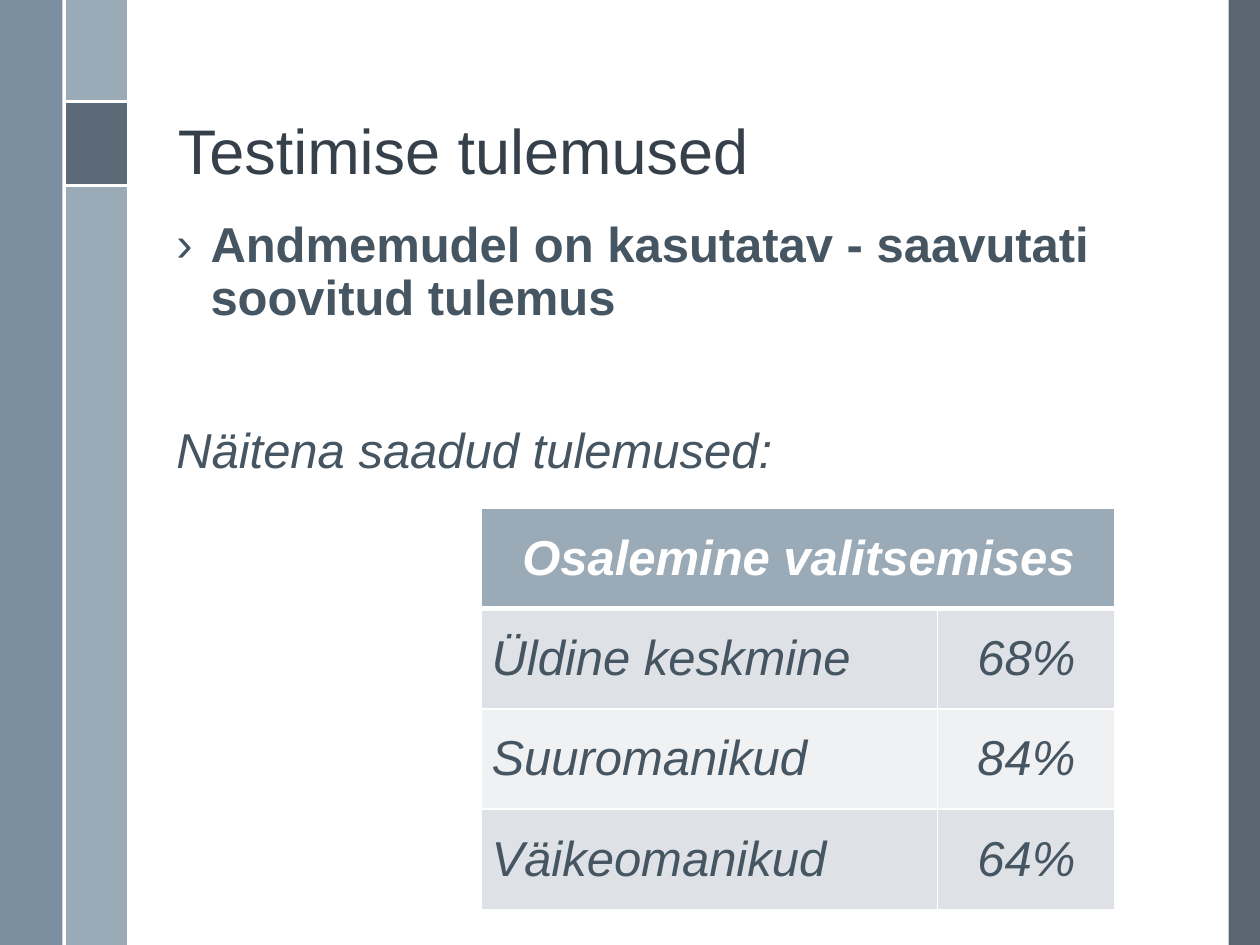
from lxml.etree import SubElement
from pptx import Presentation
from pptx.dml.color import RGBColor
from pptx.enum.shapes import MSO_CONNECTOR, MSO_SHAPE
from pptx.enum.text import MSO_ANCHOR, MSO_AUTO_SIZE, PP_ALIGN
from pptx.oxml.ns import qn
from pptx.util import Cm, Pt

# Content
TITLE = "Testimise tulemused"
POINT = "Andmemudel on kasutatav - saavutati soovitud tulemus"
INTRO = "Näitena saadud tulemused:"
HEAD = "Osalemine valitsemises"
ROWS = [("Üldine keskmine", "68%"), ("Suuromanikud", "84%"), ("Väikeomanikud", "64%")]

COLORS = {"white": "FFFFFF", "slate": "475562", "steel": "6A8093", "mist": "9BAAB7",
          "title": "35404A", "text": "465562", "odd": "DEE2E6", "even": "EFF1F3"}

# Lengths in cm
WIDE, HIGH = 25.4, 19.05
LEFT, RIGHT = 1.3, 2.56      # edges of the inner strip
TOP, LOW = 2.05, 3.74        # edges of the dark box
BARS = [  # left, top, width, height, colour, opacity in %
    (24.77, 0, 0.63, HIGH, "slate", 90),
    (LEFT, 0, RIGHT - LEFT, HIGH, "mist", 100),
    (0, 0, 1.26, HIGH, "steel", 88),
    (LEFT, TOP, RIGHT - LEFT, LOW - TOP, "slate", 75),
]
RULES = [(LEFT, TOP, RIGHT, TOP), (LEFT, LOW, RIGHT, LOW), (LEFT, 0, LEFT, HIGH)]
COLS, ROW = (9.19, 3.58), 2.02


def rgb(name):
    return RGBColor.from_string(COLORS[name])


def style(para, size, color, bold=False, italic=False):
    for run in para.runs:
        font = run.font
        font.name, font.size, font.color.rgb = "Arial", Pt(size), rgb(color)
        font.bold, font.italic = bold, italic


def place(shape, *box):
    shape.left, shape.top, shape.width, shape.height = map(Cm, box)


def border(cell, base):
    props = cell._tc.get_or_add_tcPr()
    for spot, (side, width) in enumerate((("L", 1), ("R", 1), ("T", 1), ("B", base))):
        line = SubElement(props, qn(f"a:ln{side}"), w=str(Pt(width)))
        fill = SubElement(line, qn("a:solidFill"))
        SubElement(fill, qn("a:srgbClr"), val=COLORS["white"])
        props.insert(spot, line)  # borders come before the fill


deck = Presentation()
deck.slide_width, deck.slide_height = Cm(WIDE), Cm(HIGH)
slide = deck.slides.add_slide(deck.slide_layouts[1])
shapes = slide.shapes

# Side strips
for *box, color, alpha in BARS:
    bar = shapes.add_shape(MSO_SHAPE.RECTANGLE, *map(Cm, box))
    bar.shadow.inherit = False
    bar.fill.solid()
    bar.fill.fore_color.rgb = rgb(color)
    bar.line.fill.background()
    if alpha < 100:
        tint = bar._element.spPr.find(".//" + qn("a:srgbClr"))
        SubElement(tint, qn("a:alpha"), val=str(alpha * 1000))
for ends in RULES:
    rule = shapes.add_connector(MSO_CONNECTOR.STRAIGHT, *map(Cm, ends))
    rule.line.color.rgb, rule.line.width = rgb("white"), Pt(1.5)
    SubElement(rule._element.spPr, qn("a:effectLst"))

# Title
title = shapes.title
place(title, 3.33, 0.48, 20.4, 3.45)
frame = title.text_frame
frame.text = TITLE
frame.auto_size, frame.vertical_anchor = MSO_AUTO_SIZE.NONE, MSO_ANCHOR.BOTTOM
para = frame.paragraphs[0]
para.alignment, para.line_spacing = PP_ALIGN.LEFT, 0.9
style(para, 36, "title")

# Body: the wide gap before the intro is paragraph spacing
body = slide.placeholders[1]
place(body, 3.3, 4.32, 19.99, 5.99)
frame = body.text_frame
frame.text = f"{POINT}\n{INTRO}"
frame.auto_size, frame.vertical_anchor = MSO_AUTO_SIZE.NONE, MSO_ANCHOR.TOP
for para, gap, mark in zip(frame.paragraphs, (14, 57), ("›", None)):
    para.line_spacing, para.space_before = 0.9, Pt(gap)
    style(para, 28, "text", bold=bool(mark), italic=not mark)
    props = para._p.get_or_add_pPr()
    props.set("marL", str(Cm(0.69)))
    props.set("indent", str(Cm(-0.69)))
    if mark:
        SubElement(props, qn("a:buFont"), typeface="Arial")
        SubElement(props, qn("a:buChar"), char=mark)
    else:
        SubElement(props, qn("a:buNone"))

# Results table
cells = [(HEAD, "")] + ROWS
grid = shapes.add_table(len(cells), len(COLS), Cm(9.71), Cm(10.25),
                        Cm(sum(COLS)), Cm(ROW * len(cells))).table
for col, width in zip(grid.columns, COLS):
    col.width = Cm(width)
grid.cell(0, 0).merge(grid.cell(0, 1))
for r, row in enumerate(cells):
    grid.rows[r].height = Cm(ROW)
    head = r == 0
    for c, text in enumerate(row):
        cell = grid.cell(r, c)
        cell.text = text
        cell.vertical_anchor = MSO_ANCHOR.MIDDLE
        cell.margin_left = cell.margin_right = Cm(0.2)
        cell.fill.solid()
        cell.fill.fore_color.rgb = rgb("mist" if head else "odd" if r % 2 else "even")
        border(cell, 3 if head else 1)
        para = cell.text_frame.paragraphs[0]
        para.alignment = PP_ALIGN.CENTER if head or c else PP_ALIGN.LEFT
        style(para, 28, "white" if head else "text", bold=head, italic=True)

deck.save("out.pptx")
